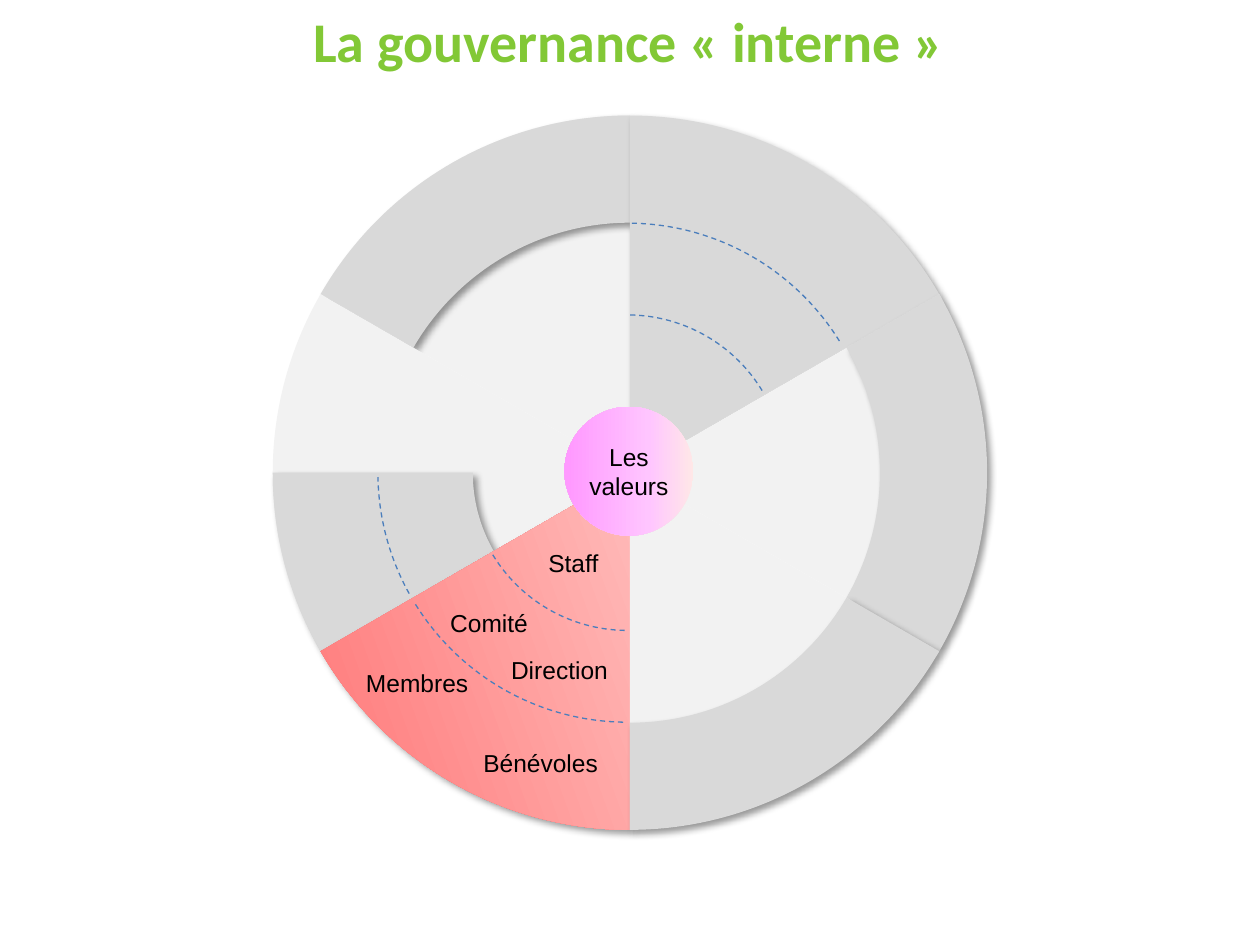
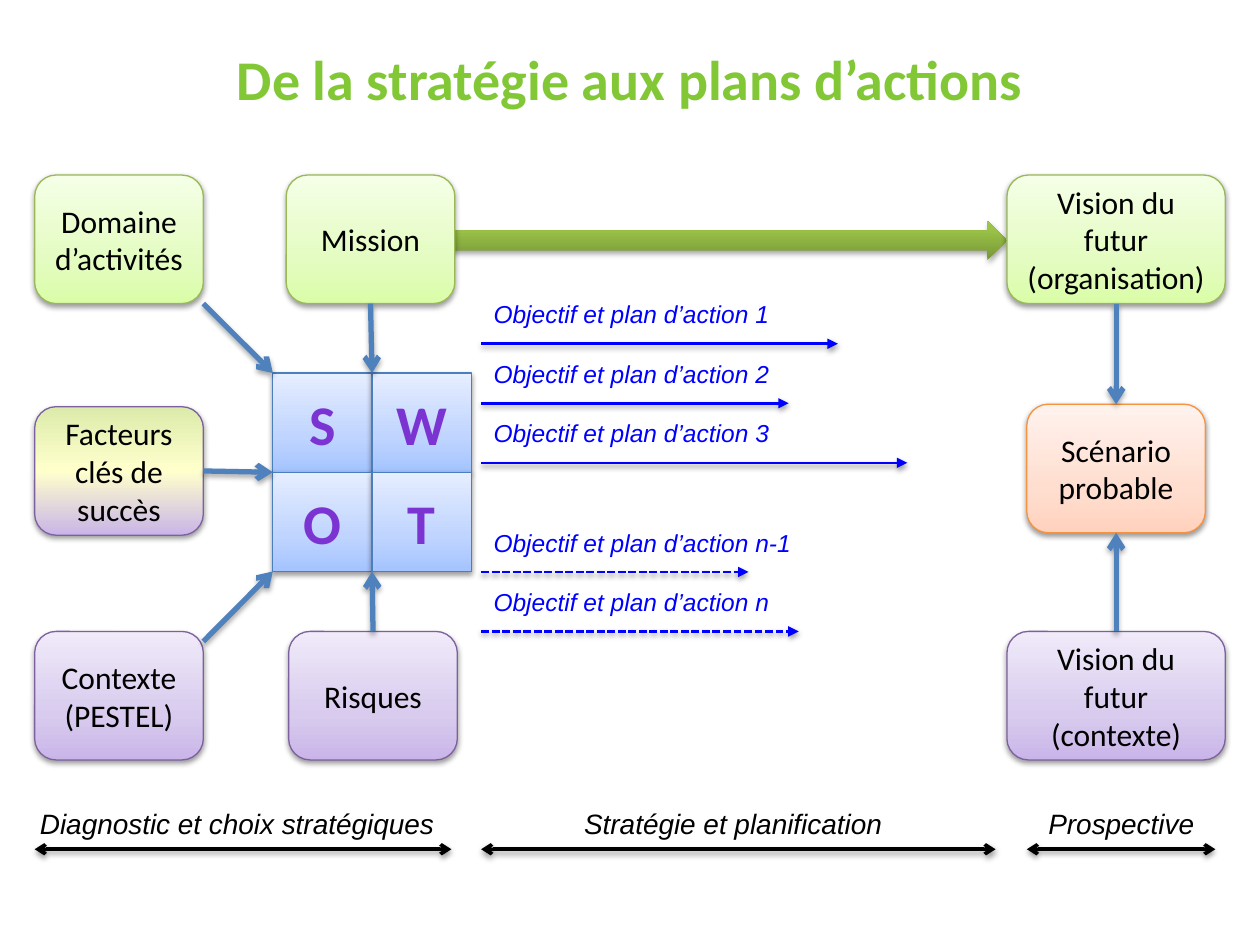
from lxml import etree
from pptx import Presentation
from pptx.dml.color import RGBColor
from pptx.enum.dml import MSO_LINE
from pptx.enum.shapes import MSO_CONNECTOR, MSO_SHAPE
from pptx.enum.text import MSO_ANCHOR, PP_ALIGN
from pptx.oxml.ns import qn
from pptx.util import Cm, Pt

PIE, BLOCK_ARC, ARC = MSO_SHAPE.PIE, MSO_SHAPE.BLOCK_ARC, MSO_SHAPE.ARC
OVAL, RECT, ROUNDED = MSO_SHAPE.OVAL, MSO_SHAPE.RECTANGLE, MSO_SHAPE.ROUNDED_RECTANGLE
RIGHT_ARROW, STRAIGHT = MSO_SHAPE.RIGHT_ARROW, MSO_CONNECTOR.STRAIGHT
DASH, SHORT_DASH = MSO_LINE.DASH, MSO_LINE.SQUARE_DOT
LEFT, CENTER = PP_ALIGN.LEFT, PP_ALIGN.CENTER
TOP, MIDDLE = MSO_ANCHOR.TOP, MSO_ANCHOR.MIDDLE

COLORS = {
    "title": "82C836", "black": "000000", "light": "F2F2F2", "grey": "D9D9D9",
    "edge": "4B7EBC", "link": "4F81BD", "objective": "0000FF",
    "green": "98B955", "purple": "7D60A0", "orange": "F69240", "letter_edge": "5E457C",
}
# name: (stops, clockwise angle)
GRADIENTS = {
    "green": ([(0, "DAFDA7"), (35, "E4FCC2"), (100, "F5FFE7")], 270),
    "purple": ([(0, "C9B5E8"), (35, "D8CBEE"), (100, "F0EAF9")], 270),
    "orange": ([(0, "FFD2BD"), (35, "FFDED0"), (100, "FFF2ED")], 270),
    "mixed": ([(0, "C9B5E8"), (50, "FFFFCC"), (100, "DCEBAB")], 270),
    "swot": ([(0, "A4C4FF"), (35, "BFD4FF"), (100, "E6EEFF")], 270),
    "arrow": ([(0, "779737"), (80, "9BC348"), (100, "9DC746")], 270),
    "letter": ([(0, "3D1B67"), (43, "7B34D2"), (48, "7330C4"), (100, "3D1B67")], 90),
    "red": ([(0, "FF7171"), (54, "FFC0BF"), (100, "FFE7E7")], 340),
    "pink": ([(0, "FFE7E7"), (35, "FFC5FF"), (98, "FF99FF")], 180),
}
# opacity %, blur pt, distance pt, angle
SHADOWS = {"wheel": (40, 4, 3, 45), "box": (38, 3.1, 1.6, 90), "link": (35, 3.1, 1.8, 90)}

TITLE = {"size": Pt(32), "name": "Calibri", "bold": True}
BOX = {"size": Pt(18), "name": "Calibri"}
LABEL = {"size": Pt(14), "name": "Arial"}
OBJECTIVE = {"size": Pt(14), "name": "Arial", "italic": True}
PHASE = {"size": Pt(16), "name": "Arial", "italic": True}

# Slide 1: wheel (lengths in cm, angles in clockwise degrees)
WHEEL_TITLE = "La gouvernance « interne »"
CENTER_X, CENTER_Y, WHEEL_R, HUB_R = 12.7, 9.53, 7.2, 1.3
RING_X, RING_INSET = 12.65, 1
OUTER_RING, INNER_RING = 5.03, 3.18
# start, end, base fill, rim thickness, dashed rings
SECTORS = [
    (210, 270, "light", 0.15, []),
    (150, 210, "light", None, []),
    (150, 180, None, 0.28, [OUTER_RING]),
    (270, 330, "grey", None, [OUTER_RING, INNER_RING]),
    (330, 30, "light", 0.15, []),
    (90, 150, "red", None, [OUTER_RING, INNER_RING]),
    (30, 90, "light", 0.15, []),
]
# text, middle x, middle y, width
ROLES = [
    ("Comité", 9.86, 12.57, 2.08), ("Membres", 8.41, 13.77, 2.59),
    ("Bénévoles", 10.9, 15.39, 2.84), ("Direction", 11.28, 13.51, 2.49),
    ("Staff", 11.56, 11.35, 1.52),
]

# Slide 2: strategy
STRATEGY_TITLE = "De la stratégie aux plans d’actions"
BOX_H = 2.59
# name: (text, left, top, width, gradient, line)
BOXES = {
    "domaine": ("Domaine d’activités", 0.7, 3.53, 3.4, "green", "green"),
    "contexte": ("Contexte\n(PESTEL)", 0.7, 12.73, 3.4, "purple", "purple"),
    "organisation": ("Vision du futur\n(organisation)", 20.3, 3.53, 4.4, "green", "green"),
    "scenario": ("Scénario probable", 20.7, 8.15, 3.6, "orange", "orange"),
    "facteurs": ("Facteurs clés de succès", 0.7, 8.2, 3.4, "mixed", "purple"),
    "risques": ("Risques", 5.82, 12.73, 3.4, "purple", "purple"),
    "vision": ("Vision du futur\n(contexte)", 20.3, 12.73, 4.4, "purple", "purple"),
    "mission": ("Mission", 5.77, 3.53, 3.4, "green", "green"),
}
SWOT, SWOT_X, SWOT_Y, CELL = ["SW", "OT"], 5.5, 7.52, 2
MID_X, MID_Y, SWOT_BOTTOM = SWOT_X + CELL, SWOT_Y + CELL, SWOT_Y + 2 * CELL
# box, connection site, end point on the SWOT grid
SWOT_LINKS = [
    ("mission", 2, (MID_X, SWOT_Y)), ("facteurs", 3, (SWOT_X, MID_Y)),
    ("risques", 0, (MID_X, SWOT_BOTTOM)),
]
CORNER_LINKS = [
    ((4.1, 6.12), (SWOT_X, SWOT_Y)), ((4.1, 12.93), (SWOT_X, SWOT_BOTTOM)),
]
SCENARIO_LINKS = [("organisation", 2, 0), ("vision", 0, 2)]
OBJECTIVE_X, OBJECTIVE_STEP = 9.7, 1.2
# first line y, dash, (suffix, line end x)
OBJECTIVES = [
    (6.93, None, [("1", 16.89), ("2", 15.9), ("3", 18.29)]),
    (11.53, SHORT_DASH, [("n-1", 15.09), ("n", 16.1)]),
]
PHASE_Y = 17.12
# text, text left, text width, line start, line end
PHASES = [
    ("Diagnostic et choix stratégiques", 0.5, 8.56, 0.7, 9.1),
    ("Prospective", 20.7, 3.81, 20.7, 24.5),
    ("Stratégie et planification", 9.7, 10.16, 9.7, 20.07),
]


def rgb(color):
    return RGBColor.from_string(COLORS[color])


def sub(parent, tag, **attrs):
    return etree.SubElement(parent, qn(tag), {k: str(v) for k, v in attrs.items()})


def gradient(name):
    stops, angle = GRADIENTS[name]
    grad = etree.Element(qn("a:gradFill"), rotWithShape="1")
    gs_list = sub(grad, "a:gsLst")
    for pos, color in stops:
        sub(sub(gs_list, "a:gs", pos=pos * 1000), "a:srgbClr", val=color)
    sub(grad, "a:lin", ang=angle * 60000, scaled=0)
    return grad


def set_effects(sp, shadow=None):
    """Override the theme effects with the named shadow, or with none."""
    effects = sub(sp._element.spPr, "a:effectLst")
    if shadow:
        opacity, blur, dist, angle = SHADOWS[shadow]
        outer = sub(effects, "a:outerShdw", blurRad=int(Pt(blur)), dist=int(Pt(dist)),
                    dir=angle * 60000, rotWithShape=0)
        sub(sub(outer, "a:srgbClr", val=COLORS["black"]), "a:alpha", val=opacity * 1000)


def set_line(line, color, width, dash=None):
    line.color.rgb = rgb(color)
    line.width = Pt(width)
    if dash:
        line.dash_style = dash


def write(sp, text, style, color="black", align=CENTER, anchor=MIDDLE, wrap=True):
    tf = sp.text_frame
    tf.word_wrap, tf.vertical_anchor = wrap, anchor
    p = tf.paragraphs[0]
    p.text, p.alignment = text, align
    for r in p.runs:
        for key, value in style.items():
            setattr(r.font, key, value)
        r.font.color.rgb = rgb(color)
    return tf


def add_text(slide, box, *args, **kwargs):
    write(slide.shapes.add_textbox(*map(Cm, box)), *args, **kwargs)


def add_shape(slide, kind, box, fill=None, line=None, shadow=None, adj=()):
    """Add a preset shape; line is (colour, width, dash)."""
    sp = slide.shapes.add_shape(kind, *map(Cm, box))
    for i, value in enumerate(adj):
        sp.adjustments[i] = value
    sp.fill.background()
    if fill in GRADIENTS:
        spPr = sp._element.spPr
        spPr.replace(spPr.find(qn("a:noFill")), gradient(fill))
    elif fill:
        sp.fill.solid()
        sp.fill.fore_color.rgb = rgb(fill)
    if line:
        set_line(sp.line, *line)
    else:
        sp.line.fill.background()
    set_effects(sp, shadow)
    return sp


def add_line(slide, start, end, color, width, shadow, dash=None, head=None, tail=None):
    sp = slide.shapes.add_connector(STRAIGHT, *map(Cm, (*start, *end)))
    set_line(sp.line, color, width, dash)
    ln = sp._element.spPr.find(qn("a:ln"))
    for tag, kind in (("a:headEnd", head), ("a:tailEnd", tail)):
        if kind:
            sub(ln, tag, type=kind)
    set_effects(sp, shadow)
    return sp


def add_link(slide, start, end):
    return add_line(slide, start, end, "link", 3, "link", tail="arrow")


def add_slide(prs, title, box):
    slide = prs.slides.add_slide(prs.slide_layouts[6])
    add_text(slide, box, title, TITLE, "title")
    return slide


def circle(x, y, radius):
    return x - radius, y - radius, 2 * radius, 2 * radius


def arc_adj(start, end):
    """Degrees as adjustment values (60000ths of a degree over 100000)."""
    return [start * 0.6, end * 0.6]


def build_wheel(prs):
    slide = add_slide(prs, WHEEL_TITLE, (-0.05, 0, 25.45, 1.63))
    disc = circle(CENTER_X, CENTER_Y, WHEEL_R)
    for start, end, base, rim, rings in SECTORS:
        adj = arc_adj(start, end)
        if base:
            add_shape(slide, PIE, disc, base, adj=adj,
                      shadow=None if base == "light" else "wheel")
        if rim:
            add_shape(slide, BLOCK_ARC, disc, "grey", shadow="wheel", adj=adj + [rim])
        for radius in rings:
            add_shape(slide, ARC, circle(RING_X, CENTER_Y, radius), line=("edge", 0.75, DASH),
                      adj=arc_adj(start + RING_INSET, end - RING_INSET))
    for text, x, y, w in ROLES:
        add_text(slide, (x - w / 2, y - 0.43, w, 0.86), text, LABEL, anchor=TOP, wrap=False)
    hub = add_shape(slide, OVAL, circle(CENTER_X - 0.02, CENTER_Y - 0.03, HUB_R), "pink")
    tf = write(hub, "Les valeurs", LABEL)
    tf.margin_left = tf.margin_right = 0


def add_swot(slide):
    for row, letters in enumerate(SWOT):
        for col, letter in enumerate(letters):
            box = (SWOT_X + col * CELL, SWOT_Y + row * CELL, CELL, CELL)
            sp = add_shape(slide, RECT, box, "swot", ("edge", 0.75), "box")
            rPr = write(sp, letter, TITLE).paragraphs[0].runs[0].font._element
            rPr.replace(rPr.find(qn("a:solidFill")), gradient("letter"))
            ln = etree.Element(qn("a:ln"), w=str(int(Pt(0.71))))
            sub(sub(ln, "a:solidFill"), "a:srgbClr", val=COLORS["letter_edge"])
            rPr.insert(0, ln)


def build_strategy(prs):
    slide = add_slide(prs, STRATEGY_TITLE, (1.27, 0.76, 22.86, 1.63))
    add_shape(slide, RIGHT_ARROW, (9.07, 4.45, 11.23, 0.79), "arrow", shadow="link")
    boxes = {}
    for name, (text, x, y, w, fill, line) in BOXES.items():
        sp = add_shape(slide, ROUNDED, (x, y, w, BOX_H), fill, (line, 0.75), "box")
        write(sp, text, BOX)
        boxes[name] = sp
    add_swot(slide)

    for name, site, end in SWOT_LINKS:
        add_link(slide, end, end).begin_connect(boxes[name], site)
    for start, end in CORNER_LINKS:
        add_link(slide, start, end)
    for name, site, scenario_site in SCENARIO_LINKS:
        link = add_link(slide, (0, 0), (0, 0))
        link.begin_connect(boxes[name], site)
        link.end_connect(boxes["scenario"], scenario_site)

    for first_y, dash, items in OBJECTIVES:
        for i, (suffix, end_x) in enumerate(items):
            y = first_y + i * OBJECTIVE_STEP
            add_text(slide, (OBJECTIVE_X, y - 1.02, 7, 0.86), f"Objectif et plan d’action {suffix}",
                     OBJECTIVE, "objective", LEFT, TOP)
            add_line(slide, (OBJECTIVE_X, y), (end_x, y), "objective", 1.5, "box", dash,
                     tail="triangle")
    for text, x, w, start_x, end_x in PHASES:
        add_text(slide, (x, PHASE_Y - 0.99, w, 0.93), text, PHASE, anchor=TOP, wrap=False)
        add_line(slide, (start_x, PHASE_Y), (end_x, PHASE_Y), "black", 2, "box",
                 head="arrow", tail="arrow")


def main():
    prs = Presentation()
    prs.slide_width, prs.slide_height = Cm(25.4), Cm(19.05)
    build_wheel(prs)
    build_strategy(prs)
    prs.save("out.pptx")


if __name__ == "__main__":
    main()
